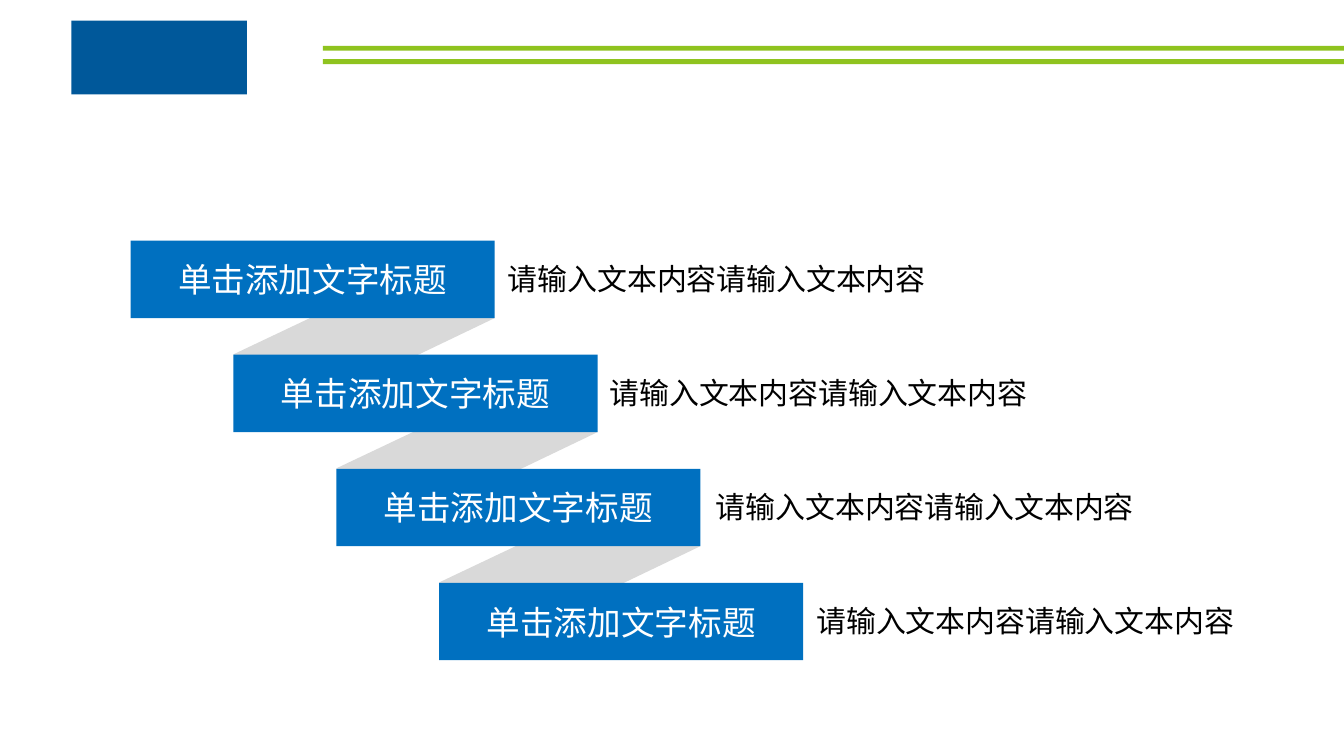
import pptx
import pptx.util
import pptx.dml.color
import pptx.enum.shapes
import pptx.enum.text
import pptx.oxml.ns
from lxml import etree

Inches = pptx.util.Inches
RECTANGLE = pptx.enum.shapes.MSO_SHAPE.RECTANGLE
COLORS = {"rule": "8FC31F", "ribbon": "D9D9D9", "step": "0070C0",
          "badge": "00589A", "white": "FFFFFF", "black": "000000"}
FONT = "Noto Sans CJK SC"
HEADING = "单击添加文字标题"
BODY = "请输入文本内容请输入文本内容"


def paint(shape, color):
    shape.shadow.inherit = False
    shape.fill.solid()
    shape.fill.fore_color.rgb = pptx.dml.color.RGBColor.from_string(COLORS[color])
    shape.line.fill.background()


def write(shape, text, size, color, alignment):
    frame = shape.text_frame
    frame.word_wrap = True
    frame.vertical_anchor = pptx.enum.text.MSO_ANCHOR.MIDDLE
    paragraph = frame.paragraphs[0]
    paragraph.text = text
    paragraph.alignment = alignment
    paragraph.font.size = pptx.util.Pt(size)
    paragraph.font.color.rgb = pptx.dml.color.RGBColor.from_string(COLORS[color])
    paragraph.font.name = FONT
    # Chinese characters take the East Asian typeface
    qn = pptx.oxml.ns.qn
    properties = paragraph._p.get_or_add_pPr().find(qn("a:defRPr"))
    etree.SubElement(properties, qn("a:ea")).set("typeface", FONT)


presentation = pptx.Presentation()
presentation.slide_width = Inches(11.11)
presentation.slide_height = Inches(6.25)
slide = presentation.slides.add_slide(presentation.slide_layouts[6])

# Header: plain badge and double rule
badge = slide.shapes.add_shape(RECTANGLE, Inches(0.59), Inches(0.17),
                               Inches(1.45), Inches(0.61))
paint(badge, "badge")
for top in (0.38, 0.49):
    rule = slide.shapes.add_shape(RECTANGLE, Inches(2.67), Inches(top),
                                  Inches(8.44), Inches(0.04))
    paint(rule, "rule")

# Staircase geometry
step_width, step_height = 3.01, 0.64
steps = [(1.08 + 0.85 * i, 1.99 + 0.943 * i) for i in range(4)]
body_lefts = [4.1, 4.94, 5.82, 6.65]

# Ribbons joining each step to the next, behind the boxes
for left, top in steps[:-1]:
    corners = [(Inches(left + x), Inches(top + y)) for x, y in
               ((0.85, 0.94), (2.2, 0.3), (step_width, step_height), (1.3, 1.46))]
    builder = slide.shapes.build_freeform(*corners[0])
    builder.add_line_segments(corners[1:], close=True)
    paint(builder.convert_to_shape(), "ribbon")

# Step boxes with their descriptions
for (left, top), body_left in zip(steps, body_lefts):
    box = slide.shapes.add_shape(RECTANGLE, Inches(left), Inches(top),
                                 Inches(step_width), Inches(step_height))
    paint(box, "step")
    write(box, HEADING, 20, "white", pptx.enum.text.PP_ALIGN.CENTER)
    body = slide.shapes.add_textbox(Inches(body_left), Inches(top + 0.11),
                                    Inches(3.98), Inches(0.4))
    write(body, BODY, 17.8, "black", pptx.enum.text.PP_ALIGN.LEFT)

presentation.save("out.pptx")
